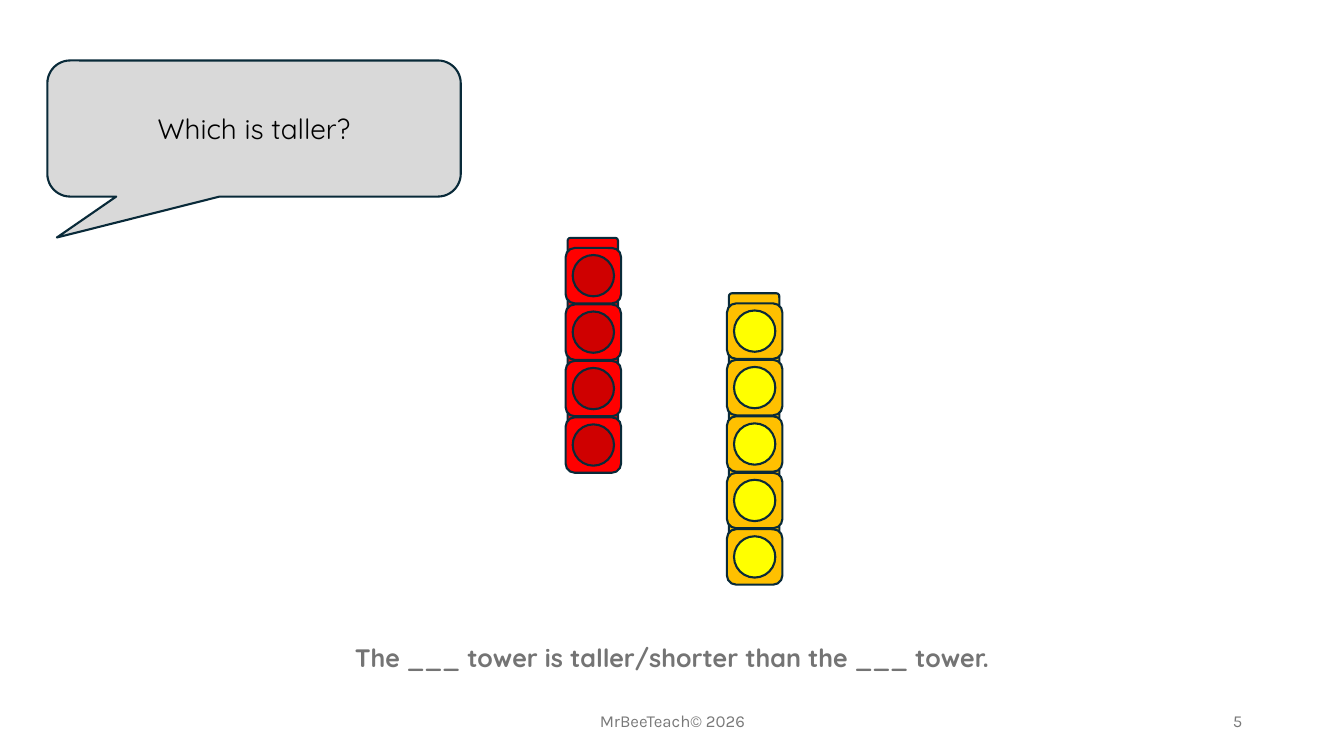
import dataclasses
import typing

import lxml.etree
import pptx
import pptx.dml.color
import pptx.enum.shapes
import pptx.enum.text
import pptx.oxml.ns
import pptx.util

EMU_PER_PX = 9144  # 100 px to the inch
SHAPE = pptx.enum.shapes.MSO_SHAPE
ALIGN = pptx.enum.text.PP_ALIGN
ANCHOR = pptx.enum.text.MSO_ANCHOR


@dataclasses.dataclass(frozen=True)
class Theme:
    outline: str = "092A39"
    bubble: str = "D9D9D9"
    question: str = "000000"
    sentence: str = "747474"
    footer: str = "797979"
    heading_font: str = "Quicksand"
    footer_font: str = "Karla"
    question_size: int = 20
    sentence_size: int = 18
    footer_size: int = 12
    outline_width: float = 1.5


@dataclasses.dataclass(frozen=True)
class Box:
    left: int
    top: int
    width: int
    height: int

    def emu(self) -> list[int]:
        return [px(side) for side in dataclasses.astuple(self)]


@dataclasses.dataclass(frozen=True)
class Wording:
    text: str
    font: str
    size: int
    color: str
    align: ALIGN = ALIGN.CENTER
    bold: bool = False


@dataclasses.dataclass(frozen=True)
class Label:
    box: Box
    wording: Wording
    anchor: ANCHOR = ANCHOR.MIDDLE
    grows: bool = False


@dataclasses.dataclass(frozen=True)
class Tower:
    left: int
    bottom: int
    cubes: int
    body: str
    dimple: str
    dimple_opacity: int = 100


THEME = Theme()
CUBE, CUBE_PITCH = 55, 56
STUD_WIDTH, STUD_HEIGHT, STUD_RISE = 50, 17, 10
DIMPLE = 41

QUESTION = Wording("Which is taller?", THEME.heading_font, THEME.question_size, THEME.question)
QUESTION_BOX = Box(47, 60, 410, 135)
BUBBLE_ADJUSTMENTS = (-0.477, 0.801, 0.167)

LABELS = (
    Label(Box(442, 695, 450, 40),
          Wording("MrBeeTeach© 2026", THEME.footer_font, THEME.footer_size, THEME.footer)),
    Label(Box(942, 695, 300, 40),
          Wording("5", THEME.footer_font, THEME.footer_size, THEME.footer, ALIGN.RIGHT)),
    Label(Box(333, 632, 667, 40),
          Wording("The ___ tower is taller/shorter than the ___ tower.", THEME.heading_font,
                  THEME.sentence_size, THEME.sentence, bold=True),
          ANCHOR.TOP, grows=True),
)

TOWERS = (
    Tower(561, 469, 4, "FF0000", "CC0000", 93),
    Tower(721, 580, 5, "FFC000", "FFFF00"),
)


def px(length: int) -> int:
    return pptx.util.Emu(length * EMU_PER_PX)


def rgb(color: str) -> pptx.dml.color.RGBColor:
    return pptx.dml.color.RGBColor.from_string(color)


def write(frame: typing.Any, wording: Wording, anchor: ANCHOR) -> None:
    frame.word_wrap = True
    frame.vertical_anchor = anchor
    paragraph = frame.paragraphs[0]
    paragraph.alignment = wording.align
    run = paragraph.add_run()
    run.text = wording.text
    run.font.name = wording.font
    run.font.size = pptx.util.Pt(wording.size)
    run.font.bold = wording.bold
    run.font.color.rgb = rgb(wording.color)


def add_outlined(shapes: typing.Any, kind: SHAPE, box: Box, fill: str, opacity: int = 100) -> typing.Any:
    """Add a filled shape with the common outline; opacity is in percent."""
    shape = shapes.add_shape(kind, *box.emu())
    shape.shadow.inherit = False
    shape.fill.solid()
    shape.fill.fore_color.rgb = rgb(fill)
    shape.line.color.rgb = rgb(THEME.outline)
    shape.line.width = pptx.util.Pt(THEME.outline_width)
    if opacity < 100:
        qn = pptx.oxml.ns.qn
        color = shape._element.spPr.find(qn("a:solidFill")).find(qn("a:srgbClr"))
        lxml.etree.SubElement(color, qn("a:alpha"), val=str(opacity * 1000))
    return shape


def add_label(shapes: typing.Any, label: Label) -> None:
    frame = shapes.add_textbox(*label.box.emu()).text_frame
    write(frame, label.wording, label.anchor)
    if label.grows:
        frame.auto_size = pptx.enum.text.MSO_AUTO_SIZE.SHAPE_TO_FIT_TEXT


def add_question(shapes: typing.Any) -> None:
    bubble = add_outlined(shapes, SHAPE.ROUNDED_RECTANGULAR_CALLOUT, QUESTION_BOX, THEME.bubble)
    for index, adjustment in enumerate(BUBBLE_ADJUSTMENTS):
        bubble.adjustments[index] = adjustment
    write(bubble.text_frame, QUESTION, ANCHOR.MIDDLE)


def add_tower(shapes: typing.Any, tower: Tower) -> None:
    """Stack cubes from the bottom up, so each covers the stud below it."""
    cubes = shapes.add_group_shape().shapes
    stud_inset = (CUBE - STUD_WIDTH) // 2
    dimple_inset = (CUBE - DIMPLE) // 2
    for level in range(tower.cubes):
        left, top = tower.left, tower.bottom - CUBE - level * CUBE_PITCH
        stud = Box(left + stud_inset, top - STUD_RISE, STUD_WIDTH, STUD_HEIGHT)
        dimple = Box(left + dimple_inset, top + dimple_inset, DIMPLE, DIMPLE)
        add_outlined(cubes, SHAPE.ROUNDED_RECTANGLE, stud, tower.body)
        add_outlined(cubes, SHAPE.ROUNDED_RECTANGLE, Box(left, top, CUBE, CUBE), tower.body)
        add_outlined(cubes, SHAPE.OVAL, dimple, tower.dimple, tower.dimple_opacity)


def main() -> None:
    deck = pptx.Presentation()
    deck.slide_width, deck.slide_height = px(1333), px(750)
    shapes = deck.slides.add_slide(deck.slide_layouts[6]).shapes
    for label in LABELS:
        add_label(shapes, label)
    add_question(shapes)
    for tower in TOWERS:
        add_tower(shapes, tower)
    deck.save("out.pptx")


if __name__ == "__main__":
    main()
